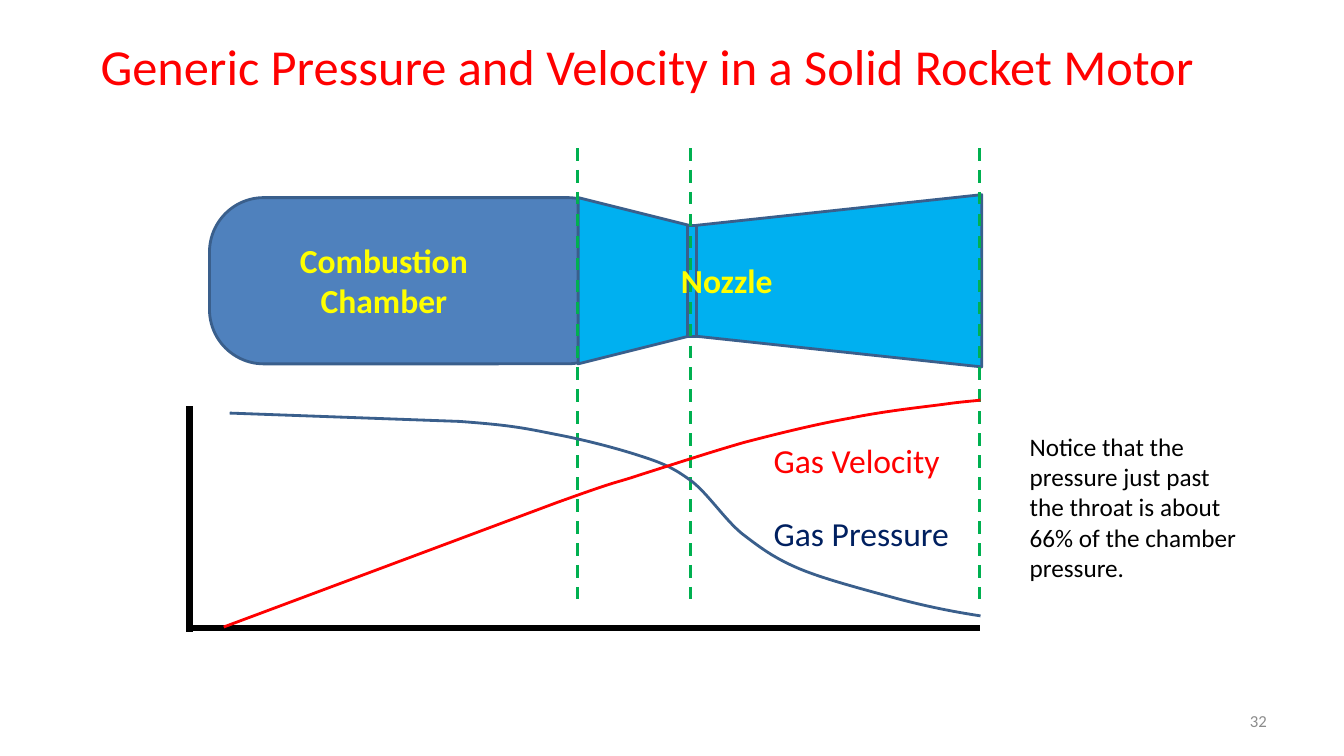
from lxml.etree import SubElement
from pptx import Presentation
from pptx.dml.color import RGBColor
from pptx.enum.dml import MSO_LINE
from pptx.enum.shapes import MSO_CONNECTOR, MSO_SHAPE
from pptx.enum.text import MSO_ANCHOR, PP_ALIGN
from pptx.oxml.ns import qn
from pptx.util import Cm, Pt

RED = RGBColor(0xFF, 0x00, 0x00)
BLACK = RGBColor(0x00, 0x00, 0x00)
GRAY = RGBColor(0x8C, 0x8C, 0x8C)
NAVY = RGBColor(0x00, 0x20, 0x60)
YELLOW = RGBColor(0xFF, 0xFF, 0x00)
GREEN = RGBColor(0x00, 0xB0, 0x50)
CHAMBER_BLUE = RGBColor(0x4F, 0x81, 0xBD)
NOZZLE_BLUE = RGBColor(0x00, 0xB0, 0xF0)
OUTLINE_BLUE = RGBColor(0x3A, 0x5F, 0x8C)

PRESSURE = [
    (1.07, 0.33), (6.86, 0.54),
    (8.23, 0.64), (8.54, 0.72), (9.3, 0.87),
    (10.09, 1.02), (10.95, 1.25), (11.54, 1.45),
    (12.09, 1.63), (12.32, 1.76), (12.73, 2.06),
    (13.14, 2.39), (13.54, 3), (13.97, 3.36),
    (14.43, 3.71), (14.76, 3.97), (15.42, 4.25),
    (16.06, 4.52), (17.15, 4.8), (17.91, 5.01),
    (18.67, 5.21), (19.33, 5.34), (19.99, 5.44),
]
VELOCITY = [
    (0.92, 5.72), (9.3, 2.59),
    (11.05, 1.96), (10.65, 2.14), (11.43, 1.88),
    (12.22, 1.63), (13.16, 1.32), (14.03, 1.07),
    (14.91, 0.84), (15.85, 0.61), (16.69, 0.46),
    (17.56, 0.28), (18.52, 0.18), (19.05, 0.11),
    (19.61, 0.03), (19.82, 0.03), (19.99, 0),
]


def add_text(page, box, text, size, color, align=PP_ALIGN.LEFT, bold=False, anchor=MSO_ANCHOR.TOP):
    frame = page.shapes.add_textbox(*map(Cm, box)).text_frame
    frame.word_wrap = True
    frame.vertical_anchor = anchor
    para = frame.paragraphs[0]
    para.alignment = align
    span = para.add_run()
    span.text = text
    span.font.name = "Calibri"
    span.font.size = Pt(size)
    span.font.bold = bold
    span.font.color.rgb = color


def add_part(page, kind, box, fill, adjustment=None):
    part = page.shapes.add_shape(kind, *map(Cm, box))
    part.shadow.inherit = False
    part.fill.solid()
    part.fill.fore_color.rgb = fill
    part.line.color.rgb = OUTLINE_BLUE
    part.line.width = Pt(2)
    if adjustment is not None:
        part.adjustments[0] = adjustment
    return part


def add_cone(page, left, axis, length, mouth, rotation, taper):
    box = (left + (length - mouth) / 2, axis - length / 2, mouth, length)
    add_part(page, MSO_SHAPE.TRAPEZOID, box, NOZZLE_BLUE, taper).rotation = rotation


def add_line(page, start, end, color, width, dash=None):
    line = page.shapes.add_connector(MSO_CONNECTOR.STRAIGHT, *map(Cm, start + end))
    line.line.color.rgb = color
    line.line.width = Pt(width)
    if dash is not None:
        line.line.dash_style = dash
    SubElement(line._element.spPr, qn("a:effectLst"))


def add_curve(page, left, top, points, color):
    placed = [(Cm(left + x), Cm(top + y)) for x, y in points]
    builder = page.shapes.build_freeform(*placed[0])
    builder.add_line_segments(placed[1:], close=False)
    curve = builder.convert_to_shape()
    curve.shadow.inherit = False
    curve.fill.background()
    curve.line.color.rgb = color
    curve.line.width = Pt(2)
    outline = curve._element.find(".//" + qn("a:path"))
    segments = outline.findall(qn("a:lnTo"))[1:]
    for first in range(0, len(segments), 3):
        bezier = SubElement(outline, qn("a:cubicBezTo"))
        for segment in segments[first:first + 3]:
            bezier.append(segment[0])
            outline.remove(segment)


def draw_motor(page, left, top, height):
    axis = top + height / 2
    add_part(page, MSO_SHAPE.ROUNDED_RECTANGLE, (left, top, 10.39, height), CHAMBER_BLUE, 0.327)
    add_cone(page, left + 9.29, axis, 2.84, height, 90, 0.25)
    add_cone(page, left + 12.27, axis, 7.19, 4.34, 270, 0.178)
    add_part(page, MSO_SHAPE.RECTANGLE, (left + 12.04, axis - 1.4, 0.23, 2.8), NOZZLE_BLUE)


def label_motor(page, left, top):
    for x, y, height, name in ((1.07, 0.94, 2.31, "Combustion Chamber"), (9.71, 1.45, 1.27, "Nozzle")):
        add_text(page, (left + x, top + y, 6.65, height), name, 24, YELLOW, PP_ALIGN.CENTER, True)


def draw_stations(page, left, top, height):
    for offset in (0, 2.85, 10.14):
        x = left + offset
        add_line(page, (x, top), (x, top + height), GREEN, 2.25, MSO_LINE.DASH)


def draw_axes(page, left, top, width, height):
    add_line(page, (left + 0.06, top + 0.16), (left + 0.06, top + height + 0.11), BLACK, 4.5)
    add_line(page, (left + width, top + height), (left, top + height), BLACK, 4.5)


def draw_curves(page, left, top):
    add_curve(page, left, top, PRESSURE, OUTLINE_BLUE)
    add_curve(page, left, top, VELOCITY, RED)
    for y, name, color in ((0.89, "Gas Velocity", RED), (2.72, "Gas Pressure", NAVY)):
        add_text(page, (left + 14.53, top + y, 7.32, 1.27), name, 24, color)


def draw_slide(page):
    add_text(page, (24.28, 17.65, 7.9, 1.02), "32", 12, GRAY, PP_ALIGN.RIGHT, anchor=MSO_ANCHOR.MIDDLE)
    add_text(page, (1.73, 0.76, 29.18, 2.16), "Generic Pressure and Velocity in a Solid Rocket Motor",
             36, RED, PP_ALIGN.CENTER)
    draw_motor(page, 5.28, 4.98, 4.19)
    draw_axes(page, 4.72, 10.08, 19.97, 5.74)
    draw_stations(page, 14.55, 3.73, 11.59)
    draw_curves(page, 4.72, 10.08)
    label_motor(page, 5.28, 4.98)
    add_text(page, (25.7, 10.74, 5.72, 4.11),
             "Notice that the pressure just past the throat is about 66% of the chamber pressure.", 18, BLACK)


def main():
    deck = Presentation()
    deck.slide_width = Cm(33.87)
    deck.slide_height = Cm(19.05)
    draw_slide(deck.slides.add_slide(deck.slide_layouts[6]))
    deck.save("out.pptx")


if __name__ == "__main__":
    main()
